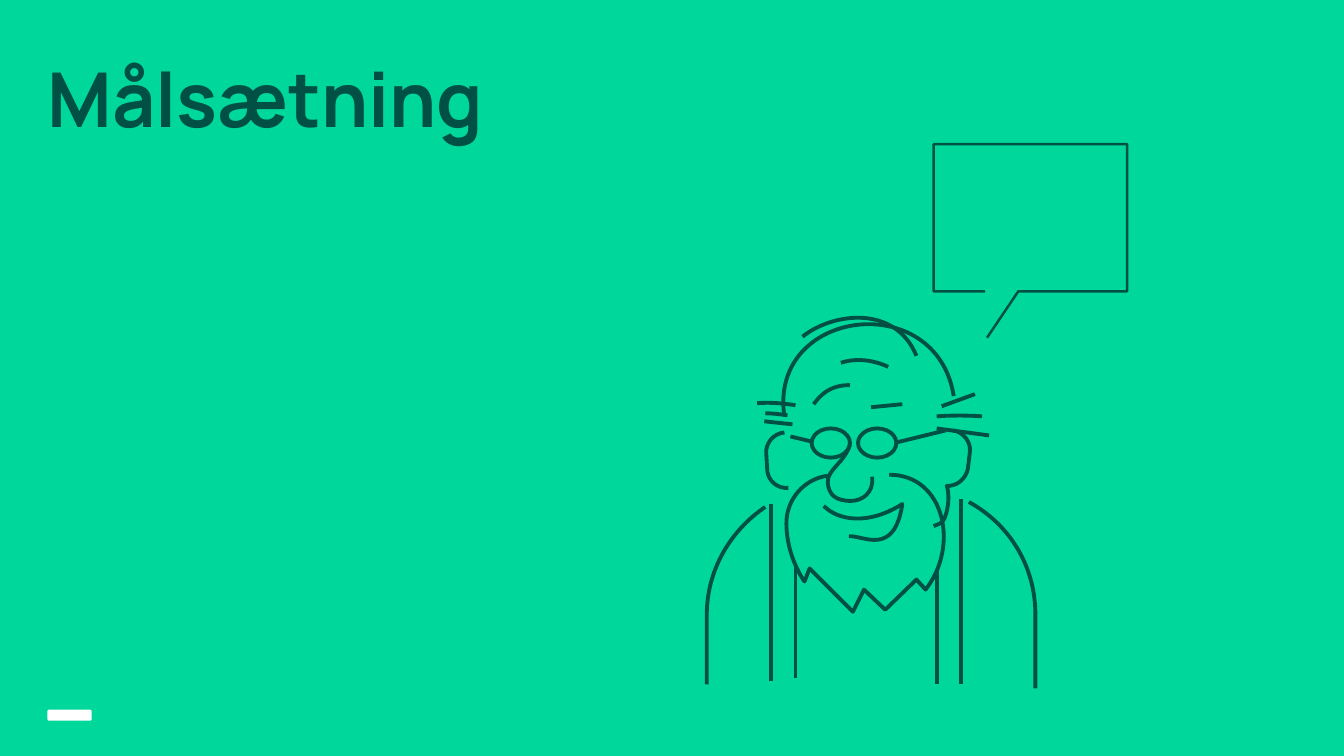
import dataclasses

import lxml.etree
import pptx
import pptx.dml.color
import pptx.enum.shapes
import pptx.enum.text
import pptx.oxml.ns
import pptx.util

Inches = pptx.util.Inches
qn = pptx.oxml.ns.qn
Preset = pptx.enum.shapes.MSO_SHAPE


@dataclasses.dataclass(frozen=True)
class Theme:
    background: str = "00D79B"
    ink: str = "005045"
    white: str = "FFFFFF"
    font: str = "Manrope"
    title_size: float = 54
    drawing_line: float = 2.75
    bubble_line: float = 1.75


def color(value):
    return pptx.dml.color.RGBColor.from_string(value)


def curve_points(start, x1, y1, x2, y2, x3, y3, steps=24):
    for step in range(1, steps + 1):
        t = step / steps
        weights = ((1 - t) ** 3, 3 * t * (1 - t) ** 2, 3 * t**2 * (1 - t), t**3)
        yield tuple(
            sum(weight * value for weight, value in zip(weights, values))
            for values in ((start[0], x1, x2, x3), (start[1], y1, y2, y3))
        )


class SlideBuilder:
    def __init__(self, slide, theme):
        self.slide = slide
        self.theme = theme
        self.shapes = slide.shapes

    def begin_group(self):
        self.shapes = self.slide.shapes.add_group_shape().shapes

    def end_group(self):
        self.shapes = self.slide.shapes

    def title(self, text, left, top, width, height):
        shape = self.shapes.add_textbox(*map(Inches, (left, top, width, height)))
        frame = shape.text_frame
        frame.word_wrap = True
        frame.vertical_anchor = pptx.enum.text.MSO_ANCHOR.TOP
        frame.margin_left = frame.margin_right = 0
        frame.margin_top = frame.margin_bottom = 0
        frame.text = text
        paragraph = frame.paragraphs[0]
        paragraph.line_spacing = 0.83
        font = paragraph.runs[0].font
        font.name = self.theme.font
        font.size = pptx.util.Pt(self.theme.title_size)
        font.bold = True
        font.color.rgb = color(self.theme.ink)

    def ink(self, shape, width):
        shape.line.color.rgb = color(self.theme.ink)
        shape.line.width = pptx.util.Pt(width)

    def outline(self, shape, width):
        shape.shadow.inherit = False
        shape.fill.background()
        self.ink(shape, width)

    def line(self, x1, y1, x2, y2):
        connector = self.shapes.add_connector(
            pptx.enum.shapes.MSO_CONNECTOR.STRAIGHT, *map(Inches, (x1, y1, x2, y2))
        )
        self.ink(connector, self.theme.drawing_line)
        lxml.etree.SubElement(connector._element.spPr, qn("a:effectLst"))

    def stroke(self, start, *segments, width=None):
        points = [start]
        for segment in segments:
            if len(segment) == 2:
                points.append(segment)
            else:
                points.extend(curve_points(points[-1], *segment))
        points = [(Inches(x), Inches(y)) for x, y in points]
        builder = self.shapes.build_freeform(*points[0])
        builder.add_line_segments(points[1:], close=False)
        shape = builder.convert_to_shape()
        self.bend(shape, start, segments)
        self.outline(shape, width or self.theme.drawing_line)

    def bend(self, shape, start, segments):
        outline = next(shape._element.iter(qn("a:path")))
        for child in list(outline):
            outline.remove(child)
        for index, segment in enumerate((start, *segments)):
            tag = "a:moveTo" if index == 0 else "a:lnTo"
            if len(segment) == 6:
                tag = "a:cubicBezTo"
            command = lxml.etree.SubElement(outline, qn(tag))
            for x, y in zip(segment[::2], segment[1::2]):
                point = lxml.etree.SubElement(command, qn("a:pt"))
                point.set("x", str(Inches(x) - shape.left))
                point.set("y", str(Inches(y) - shape.top))

    def oval(self, left, top, width, height):
        shape = self.shapes.add_shape(
            Preset.OVAL, *map(Inches, (left, top, width, height))
        )
        self.outline(shape, self.theme.drawing_line)

    def panel(self, preset, fill_color, left, top, width, height):
        shape = self.shapes.add_shape(preset, *map(Inches, (left, top, width, height)))
        shape.shadow.inherit = False
        shape.fill.solid()
        shape.fill.fore_color.rgb = color(fill_color)
        shape.line.fill.background()


EARS = [
    [(9.38, 4.82), (9.49, 4.83, 9.58, 4.75, 9.6, 4.65), (9.62, 4.48),
     (9.63, 4.38, 9.55, 4.28, 9.45, 4.27)],
    [(7.82, 4.84), (7.71, 4.85, 7.62, 4.77, 7.61, 4.67), (7.6, 4.5),
     (7.59, 4.4, 7.67, 4.3, 7.78, 4.29)],
]
HEAD = [
    [(9.46, 3.93), (9.29, 2.85, 7.62, 3.06, 7.78, 4.13)],
    [(7.96, 3.34), (8.26, 3.1, 8.88, 3.02, 9.09, 3.53)],
    [(8.34, 3.6), (8.49, 3.55, 8.66, 3.57, 8.81, 3.64)],
    [(8.07, 4.01), (8.13, 3.93, 8.22, 3.82, 8.43, 3.82)],
]
BEARD = [
    [(8.82, 4.71), (9.37, 4.71, 9.52, 5.42, 9.18, 5.85), (9.09, 5.75), (8.78, 6.05),
     (8.57, 5.85), (8.46, 6.07), (8.03, 5.64), (7.98, 5.77),
     (7.98, 5.77, 7.8, 5.53, 7.8, 5.19), (7.8, 4.95, 7.98, 4.75, 8.21, 4.72)],
    [(9.39, 4.81), (9.42, 4.92, 9.41, 5.03, 9.37, 5.14),
     (9.36, 5.15, 9.36, 5.17, 9.34, 5.18), (9.32, 5.2, 9.28, 5.21, 9.26, 5.22)],
]
SHOULDERS = [
    [(9.61, 4.98), (10.01, 5.2, 10.27, 5.61, 10.27, 6.1), (10.27, 6.83)],
    [(7.01, 6.79), (7.01, 6.1), (7.01, 5.65, 7.25, 5.26, 7.59, 5.03)],
]
MOUTH_AND_NOSE = [
    [(8.42, 5.32), (8.56, 5.31, 8.87, 5.53, 8.95, 5), (8.62, 5.21, 8.32, 5.17, 8.17, 5.02)],
    [(8.43, 4.41), (8.38, 4.59, 8.2, 4.66, 8.21, 4.79),
     (8.22, 4.91, 8.29, 4.97, 8.44, 4.97), (8.55, 4.97, 8.67, 4.89, 8.65, 4.73)],
]
SIDE_HAIR = [
    [(9.29, 4.13), (9.44, 4.12, 9.59, 4.12, 9.74, 4.13)],
    [(7.89, 4.02), (7.76, 4, 7.64, 3.99, 7.51, 4)],
    [(7.81, 4.12), (7.74, 4.11, 7.66, 4.1, 7.59, 4.1)],
    [(7.86, 4.21), (7.76, 4.2, 7.67, 4.19, 7.58, 4.18)],
]
GLASSES_ARMS = [(8.89, 4.39, 9.38, 4.27), (7.84, 4.33, 8.05, 4.38)]
BROW_AND_HAIR = [(8.64, 4.04, 8.95, 4.01), (9.34, 4.03, 9.67, 3.91), (9.29, 4.25, 9.81, 4.32)]
BRACES = [(7.65, 5, 6.76), (7.89, 5.59, 6.73), (9.29, 5.66, 6.79), (9.53, 4.95, 6.79)]
BUBBLE = [(9.79, 3.35), (10.1, 2.89), (11.18, 2.89), (11.18, 1.43),
          (9.26, 1.43), (9.26, 2.89), (9.77, 2.89)]


def main():
    presentation = pptx.Presentation()
    presentation.slide_width = Inches(13.33)
    presentation.slide_height = Inches(7.5)
    slide = presentation.slides.add_slide(presentation.slide_layouts[6])
    theme = Theme()
    builder = SlideBuilder(slide, theme)

    builder.panel(Preset.RECTANGLE, theme.background, 0, 0, 13.33, 7.5)
    builder.panel(Preset.ROUNDED_RECTANGLE, theme.white, 0.47, 7.04, 0.44, 0.11)
    builder.title("Målsætning", 0.47, 0.67, 7.59, 1.79)

    builder.begin_group()
    for stroke in EARS + HEAD + BEARD + SHOULDERS + MOUTH_AND_NOSE + SIDE_HAIR:
        builder.stroke(*stroke)
    for ends in GLASSES_ARMS + BROW_AND_HAIR:
        builder.line(*ends)
    for left in (8.05, 8.51):
        builder.oval(left, 4.25, 0.38, 0.29)
    for x, top, bottom in BRACES:
        builder.line(x, top, x, bottom)
    builder.end_group()

    builder.stroke(*BUBBLE, width=theme.bubble_line)
    presentation.save("out.pptx")


if __name__ == "__main__":
    main()
